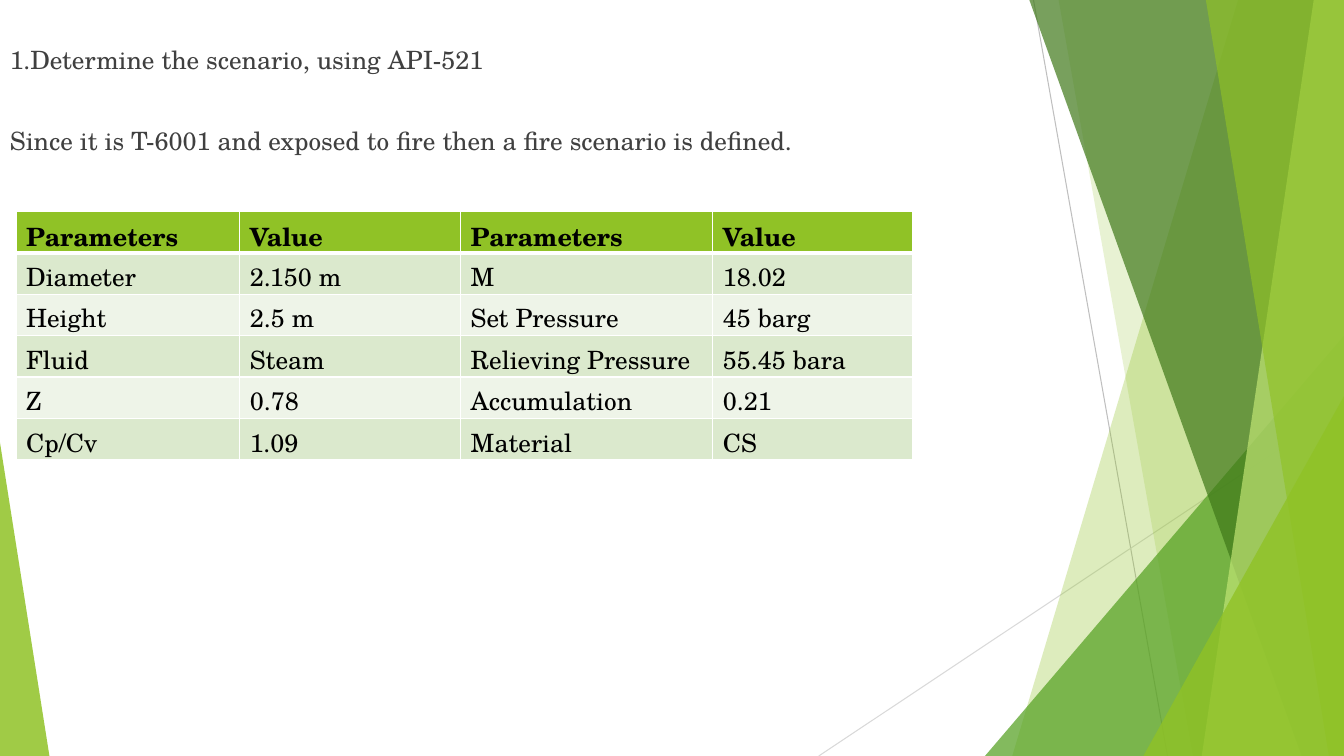
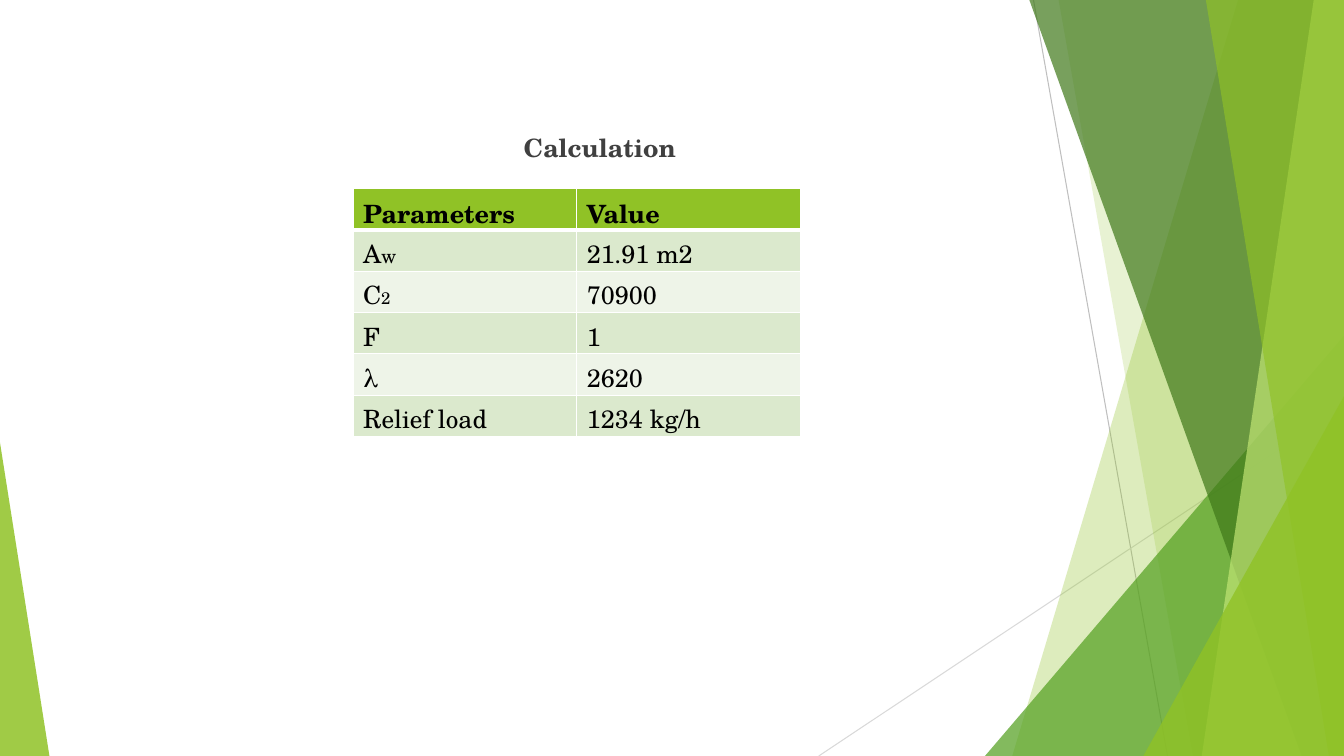
from lxml.etree import SubElement
from pptx import Presentation
from pptx.dml.color import RGBColor
from pptx.enum.shapes import MSO_CONNECTOR, MSO_SHAPE
from pptx.enum.text import PP_ALIGN
from pptx.oxml import parse_xml
from pptx.oxml.ns import nsdecls, qn
from pptx.util import Inches, Pt

FONT = "TeX Gyre Schola"
SIZE = 18
HEX = {
    "lime": "90C226", "green": "54A021", "forest": "3F7819", "pale": "C0E474",
    "gray": "BFBFBF", "mist": "D9D9D9", "text": "404040",
    "black": "000000", "white": "FFFFFF", "band": "DBE9CD", "light": "EEF4E8",
}

# The grid has 100 columns and 100 rows.
LINES = [  # from, to, colour
    ((76.9, 0), (86.87, 100), "gray"),
    ((100, 53.73), (60.92, 100), "mist"),
]
FACETS = [  # left edge at top and at bottom, colour, opacity
    (92.12, 75.32, "lime", 30),
    (78.77, 88.75, "lime", 20),
    (76.59, 96.85, "forest", 70),
    (97.75, 89.42, "pale", 70),
    (89.72, 98.87, "lime", 65),
]
PEAKS = [  # left, top, width, apex, colour, opacity
    (73.29, 44.4, 26.71, 1, "green", 72),
    (85.07, 52.4, 14.93, 1, "lime", 80),
    (0, 58.53, 3.68, 0, "lime", 85),
]
ROW = 5.47


def rgb(name):
    return RGBColor.from_string(HEX[name])


class Deck:
    def __init__(self):
        self.prs = Presentation()
        self.prs.slide_width = Inches(13.33)
        self.prs.slide_height = Inches(7.5)
        self.slide = None

    def x(self, cols):
        return round(self.prs.slide_width * cols / 100)

    def y(self, rows):
        return round(self.prs.slide_height * rows / 100)

    def page(self):
        self.slide = self.prs.slides.add_slide(self.prs.slide_layouts[6])
        for start, end, color in LINES:
            self.line(start, end, color)
        # The second peak covers every facet; the first lies under three.
        for facet in FACETS[:2]:
            self.facet(*facet)
        self.peak(*PEAKS[0])
        for facet in FACETS[2:]:
            self.facet(*facet)
        for peak in PEAKS[1:]:
            self.peak(*peak)

    def line(self, start, end, color):
        (x1, y1), (x2, y2) = start, end
        line = self.slide.shapes.add_connector(
            MSO_CONNECTOR.STRAIGHT, self.x(x1), self.y(y1), self.x(x2), self.y(y2))
        line.line.color.rgb = rgb(color)
        line.line.width = Pt(0.75)
        SubElement(line._element.spPr, qn("a:effectLst"))

    def paint(self, shape, color, alpha):
        shape.shadow.inherit = False
        shape.line.fill.background()
        shape.fill.solid()
        shape.fill.fore_color.rgb = rgb(color)
        tint = shape._element.spPr.find(qn("a:solidFill"))[0]
        SubElement(tint, qn("a:alpha")).set("val", str(alpha * 1000))

    def facet(self, top, foot, color, alpha):
        pen = self.slide.shapes.build_freeform(self.x(top), 0)
        pen.add_line_segments([
            (self.x(100), 0), (self.x(100), self.y(100)), (self.x(foot), self.y(100))])
        self.paint(pen.convert_to_shape(), color, alpha)

    def peak(self, left, top, width, apex, color, alpha):
        shape = self.slide.shapes.add_shape(
            MSO_SHAPE.ISOSCELES_TRIANGLE,
            self.x(left), self.y(top), self.x(width), self.y(100 - top))
        shape.adjustments[0] = apex
        self.paint(shape, color, alpha)

    def style(self, para, color, bold=False):
        font = para.font
        font.name, font.size, font.bold = FONT, Pt(SIZE), bold
        font.color.rgb = rgb(color)

    def text(self, left, top, width, height, lines, bold=False,
             align=PP_ALIGN.LEFT, gap=0):
        frame = self.slide.shapes.add_textbox(
            self.x(left), self.y(top), self.x(width), self.y(height)).text_frame
        frame.word_wrap = True
        for i, line in enumerate(lines):
            para = frame.add_paragraph() if i else frame.paragraphs[0]
            para.text = line
            para.alignment = align
            para.space_before = Pt(gap if i else 0)
            self.style(para, "text", bold)

    def border(self, cell, top, foot):
        props = cell._tc.get_or_add_tcPr()
        sides = (("lnL", 1), ("lnR", 1), ("lnT", top), ("lnB", foot))
        for i, (side, width) in enumerate(sides):
            props.insert(i, parse_xml(
                f'<a:{side} {nsdecls("a")} w="{Pt(width)}"><a:solidFill>'
                f'<a:srgbClr val="{HEX["white"]}"/></a:solidFill></a:{side}>'))

    def cell(self, cell, item, row):
        para = cell.text_frame.paragraphs[0]
        if isinstance(item, tuple):  # symbol, small index, index size
            symbol, index, size = item
            para.add_run().text = symbol
            run = para.add_run()
            run.text = index
            run.font.size = Pt(size)
        else:
            para.text = item
        self.style(para, "black", row == 0)
        cell.fill.solid()
        cell.fill.fore_color.rgb = rgb("lime" if row == 0 else ("light", "band")[row % 2])
        self.border(cell, 3 if row == 1 else 1, 3 if row == 0 else 1)

    def table(self, left, top, widths, rows):
        table = self.slide.shapes.add_table(
            len(rows), len(widths), self.x(left), self.y(top),
            self.x(sum(widths)), self.y(ROW * len(rows))).table
        table.horz_banding = False
        for col, width in zip(table.columns, widths):
            col.width = self.x(width)
        for r, row in enumerate(rows):
            table.rows[r].height = self.y(ROW)
            for c, item in enumerate(row):
                self.cell(table.cell(r, c), item, r)


def main():
    deck = Deck()
    head = ["Parameters", "Value"]

    # Scenario
    deck.page()
    deck.text(0, 5.2, 76, 18, [
        "1.Determine the scenario, using API-521",
        "Since it is T-6001 and exposed to fire then a fire scenario is defined.",
    ], gap=36)
    deck.table(1.2, 28, [16.65, 16.43, 18.76, 14.85], [
        head * 2,
        ["Diameter", "2.150 m", "M", "18.02"],
        ["Height", "2.5 m", "Set Pressure", "45 barg"],
        ["Fluid", "Steam", "Relieving Pressure", "55.45 bara"],
        ["Z", "0.78", "Accumulation", "0.21"],
        ["Cp/Cv", "1.09", "Material", "CS"],
    ])

    # Calculation
    deck.page()
    deck.text(29.63, 16.8, 30, 6.5, ["Calculation"], bold=True, align=PP_ALIGN.CENTER)
    deck.table(26.26, 24.93, [16.65] * 2, [
        head,
        [("A", "w", 14), "21.91 m2"],
        [("C", "2", 12), "70900"],
        ["F", "1"],
        ["λ", "2620"],
        ["Relief load", "1234 kg/h"],
    ])

    deck.prs.save("out.pptx")


if __name__ == "__main__":
    main()
